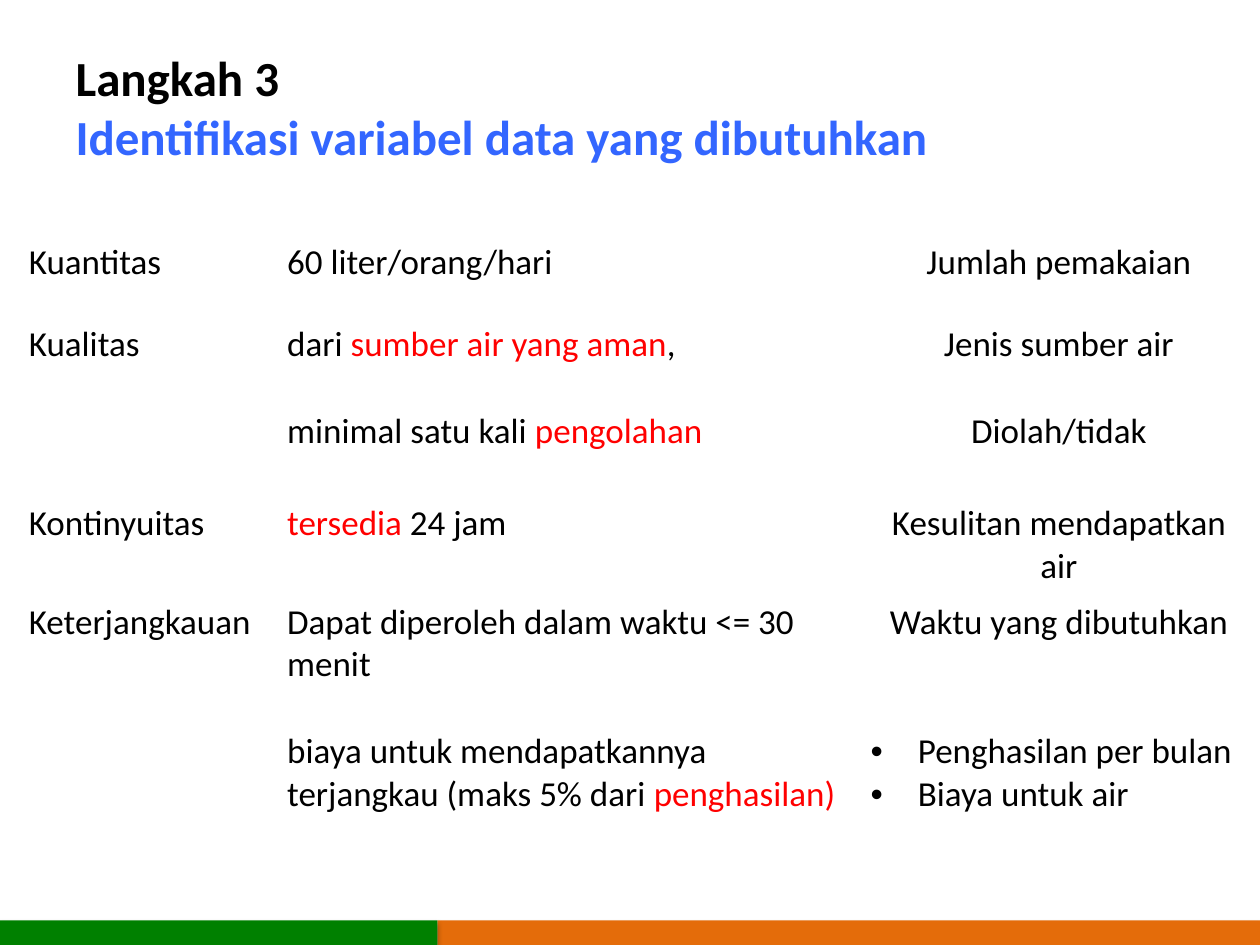
from lxml import etree
from pptx import Presentation
from pptx.dml.color import RGBColor
from pptx.enum import shapes, text
from pptx.oxml import ns
from pptx.util import Pt

BLACK = RGBColor(0x00, 0x00, 0x00)
BLUE = RGBColor(0x33, 0x66, 0xFF)
RED = RGBColor(0xFF, 0x00, 0x00)
GREEN = RGBColor(0x00, 0x80, 0x00)
ORANGE = RGBColor(0xE4, 0x6C, 0x0A)

COLUMNS = [147.6, 333.4, 229.7]
ROWS = [
    (47, "Kuantitas", [("60 liter/orang/hari", BLACK)], ["Jumlah pemakaian"]),
    (50, "Kualitas",
     [("dari ", BLACK), ("sumber air yang aman", RED), (",", BLACK)],
     ["Jenis sumber air"]),
    (52.5, "", [("minimal satu kali ", BLACK), ("pengolahan", RED)],
     ["Diolah/tidak"]),
    (56, "Kontinyuitas", [("tersedia ", RED), ("24 jam", BLACK)],
     ["Kesulitan mendapatkan air"]),
    (74, "Keterjangkauan",
     [("Dapat diperoleh dalam waktu <= 30 menit", BLACK)],
     ["Waktu yang dibutuhkan"]),
    (56, "",
     [("biaya untuk mendapatkannya terjangkau (maks 5% dari ", BLACK),
      ("penghasilan)", RED)],
     ["Penghasilan per bulan", "Biaya untuk air"]),
]


def add_run(p, words, size=20, color=BLACK, bold=False, font="Calibri"):
    r = p.add_run()
    r.text = words
    r.font.name = font
    r.font.size = Pt(size)
    r.font.bold = bold
    r.font.color.rgb = color


def add_xml(parent, tag, **attributes):
    return etree.SubElement(parent, ns.qn(tag), attributes)


class SlideBuilder:
    def __init__(self, slide):
        self.slide = slide

    def title(self, lines, left, top, width, height):
        sp = self.slide.shapes.title
        sp.left, sp.top = Pt(left), Pt(top)
        sp.width, sp.height = Pt(width), Pt(height)
        tf = sp.text_frame
        tf.auto_size = text.MSO_AUTO_SIZE.NONE
        tf.vertical_anchor = text.MSO_ANCHOR.MIDDLE
        p = tf.paragraphs[0]
        p.alignment = text.PP_ALIGN.LEFT
        for i, (words, color) in enumerate(lines):
            if i:
                p.add_line_break()
            add_run(p, words, size=28, color=color, bold=True)

    def bar(self, left, top, width, height, color):
        sp = self.slide.shapes.add_shape(
            shapes.MSO_SHAPE.RECTANGLE, Pt(left), Pt(top), Pt(width), Pt(height))
        sp.fill.solid()
        sp.fill.fore_color.rgb = color
        sp.line.fill.background()
        sp.shadow.inherit = False
        effects = sp._element.spPr.find(ns.qn("a:effectLst"))
        shadow = add_xml(effects, "a:outerShdw", blurRad=str(Pt(3.1)),
                         dist=str(Pt(1.8)), dir="5400000", rotWithShape="0")
        shade = add_xml(shadow, "a:srgbClr", val=str(BLACK))
        add_xml(shade, "a:alpha", val="35000")

    def bullet(self, p, indent=27):
        pPr = p._p.get_or_add_pPr()
        pPr.set("marL", str(Pt(indent)))
        pPr.set("indent", str(-Pt(indent)))
        add_xml(pPr, "a:buFont", typeface="Arial")
        add_xml(pPr, "a:buChar", char="•")

    def variables(self, tf, items):
        for i, item in enumerate(items):
            p = tf.add_paragraph() if i else tf.paragraphs[0]
            if len(items) > 1:
                self.bullet(p)
            else:
                p.alignment = text.PP_ALIGN.CENTER
            add_run(p, item)

    def table(self, rows, columns, left, top):
        height = sum(row[0] for row in rows)
        table = self.slide.shapes.add_table(
            len(rows), len(columns), Pt(left), Pt(top),
            Pt(sum(columns)), Pt(height)).table
        table.first_row = table.horz_banding = False
        for column, width in zip(table.columns, columns):
            column.width = Pt(width)
        for cell in table.iter_cells():
            cell.fill.background()
        for row, (height, aspect, criterion, items) in zip(table.rows, rows):
            row.height = Pt(height)
            name, standard, variable = [cell.text_frame for cell in row.cells]
            if aspect:
                add_run(name.paragraphs[0], aspect)
            for words, color in criterion:
                add_run(standard.paragraphs[0], words, color=color)
            self.variables(variable, items)


def main():
    prs = Presentation()
    prs.slide_width, prs.slide_height = Pt(720), Pt(540)
    s = SlideBuilder(prs.slides.add_slide(prs.slide_layouts[5]))
    s.title([("Langkah 3 ", BLACK),
             ("Identifikasi variabel data yang dibutuhkan", BLUE)],
            36, 16, 648, 90)
    s.bar(250, 526, 470, 14, ORANGE)
    s.bar(0, 526, 250, 14, GREEN)
    s.table(ROWS, COLUMNS, 9.3, 134)
    prs.save("out.pptx")


if __name__ == "__main__":
    main()
